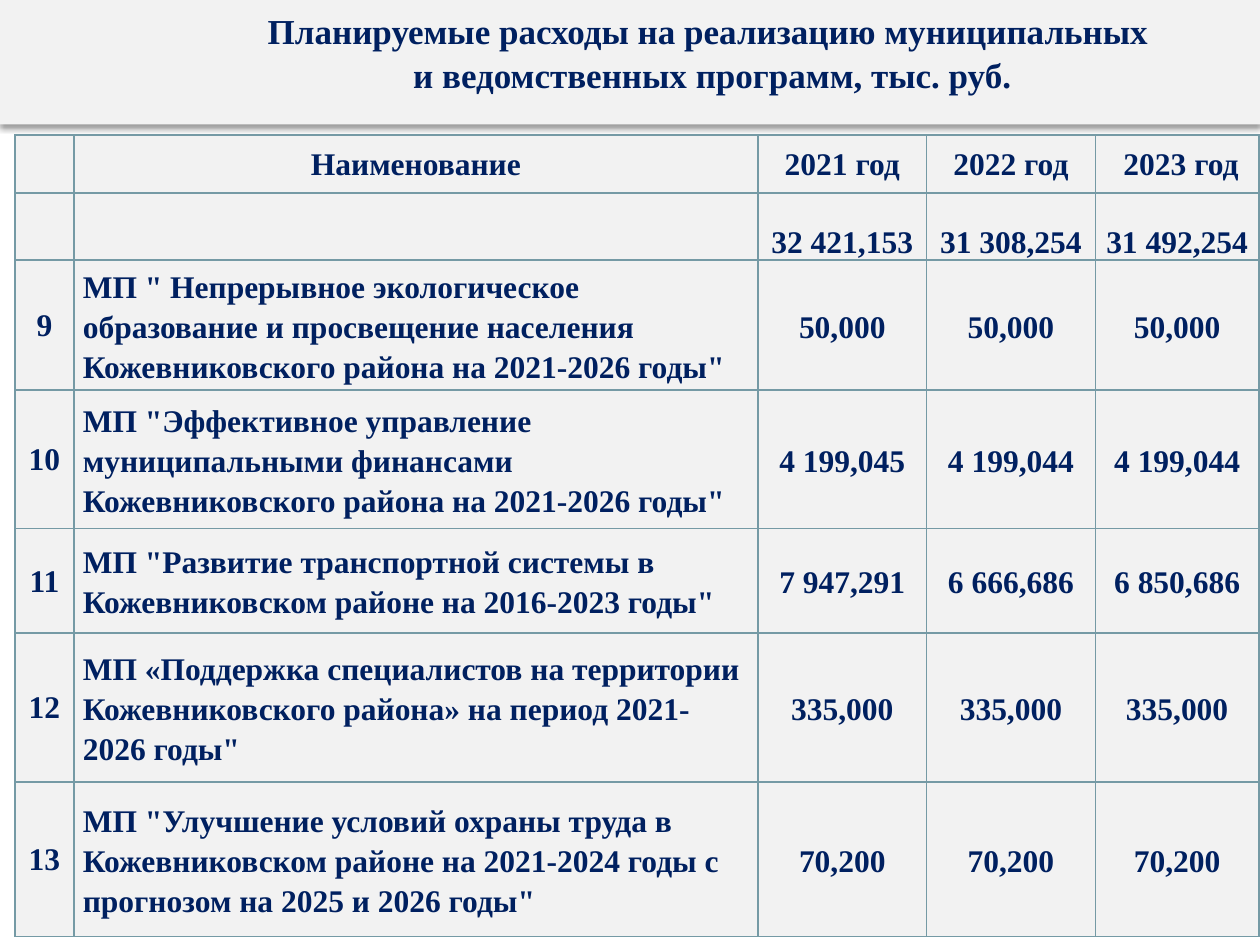
from dataclasses import dataclass

import lxml.etree
import pptx
import pptx.dml.color
import pptx.enum.text
import pptx.oxml
import pptx.oxml.ns
import pptx.util

Cm = pptx.util.Cm
Pt = pptx.util.Pt
Align = pptx.enum.text.PP_ALIGN
Anchor = pptx.enum.text.MSO_ANCHOR
DRAWING = pptx.oxml.ns.nsdecls("a")


@dataclass(frozen=True)
class Theme:
    font: str = "Times New Roman"
    text: str = "002060"
    panel: str = "F2F2F2"
    border: str = "759AA5"
    title_size: int = 20
    table_size: int = 18
    border_width: int = 1


THEME = Theme()

TITLE = [
    "Планируемые расходы на реализацию муниципальных",
    " и ведомственных программ, тыс. руб.",
]
TITLE_INDENT = 3.15

HEADER_ROWS = [
    ("", "Наименование", "2021 год", "2022 год", " 2023 год"),
    ("", "", "32 421,153", "31 308,254", "31 492,254"),
]
PROGRAM_ROWS = [
    ("9", 'МП " Непрерывное экологическое образование и просвещение населения '
          'Кожевниковского района на 2021-2026 годы"',
     "50,000", "50,000", "50,000"),
    ("10", 'МП "Эффективное управление муниципальными финансами '
           'Кожевниковского района на 2021-2026 годы"',
     "4 199,045", "4 199,044", "4 199,044"),
    ("11", 'МП "Развитие транспортной системы в Кожевниковском районе '
           'на 2016-2023 годы"',
     "7 947,291", "6 666,686", "6 850,686"),
    ("12", "МП «Поддержка специалистов на территории Кожевниковского района» "
           'на период 2021-2026 годы"',
     "335,000", "335,000", "335,000"),
    ("13", 'МП "Улучшение условий охраны труда в Кожевниковском районе '
           'на 2021-2024 годы с прогнозом на 2025 и 2026 годы"',
     "70,200", "70,200", "70,200"),
]
COLUMN_WIDTHS = [1.19, 13.79, 3.4, 3.4, 3.3]
ROW_HEIGHTS = [1.17, 1.35, 2.62, 2.79, 2.11, 3, 3.12]


def fill_solid(target, color):
    target.fill.solid()
    target.fill.fore_color.rgb = pptx.dml.color.RGBColor.from_string(color)


def format_paragraph(paragraph, size, alignment, line_spacing=1.0):
    paragraph.alignment = alignment
    paragraph.line_spacing = line_spacing
    for run in paragraph.runs:
        run.font.name = THEME.font
        run.font.size = Pt(size)
        run.font.bold = True
        run.font.color.rgb = pptx.dml.color.RGBColor.from_string(THEME.text)


def set_margins(target, left, top, right, bottom):
    target.margin_left, target.margin_top = Cm(left), Cm(top)
    target.margin_right, target.margin_bottom = Cm(right), Cm(bottom)


def add_shadow(shape):
    shape._element.spPr.append(pptx.oxml.parse_xml(
        f'<a:effectLst {DRAWING}><a:outerShdw blurRad="{Pt(3.1)}" dist="{Pt(2)}" '
        'dir="5400000" rotWithShape="0"><a:srgbClr val="000000">'
        '<a:alpha val="38000"/></a:srgbClr></a:outerShdw></a:effectLst>'))


def add_title(slide):
    title = slide.shapes.title
    title.left, title.top, title.width, title.height = 0, 0, Cm(25.4), Cm(2.51)
    fill_solid(title, THEME.panel)
    add_shadow(title)
    frame = title.text_frame
    frame.text = "\n".join(TITLE)
    frame.word_wrap = True
    frame.auto_size = pptx.enum.text.MSO_AUTO_SIZE.NONE
    frame.vertical_anchor = Anchor.TOP
    set_margins(frame, 0.25, 0.2, 0.25, 0.13)
    for paragraph in frame.paragraphs:
        format_paragraph(paragraph, THEME.title_size, Align.CENTER)
    first, second = frame.paragraphs
    first._p.get_or_add_pPr().set("marL", str(Cm(TITLE_INDENT)))
    second.space_before = Pt(1)


def add_borders(cell):
    properties = cell._tc.get_or_add_tcPr()
    for position, side in enumerate("LRTB"):
        properties.insert(position, pptx.oxml.parse_xml(
            f'<a:ln{side} {DRAWING} w="{Pt(THEME.border_width)}"><a:solidFill>'
            f'<a:srgbClr val="{THEME.border}"/></a:solidFill></a:ln{side}>'))


def format_cell(cell, text, row, column):
    is_program = row >= len(HEADER_ROWS)
    is_detail = is_program and column > 0
    cell.text_frame.text = text
    cell.vertical_anchor = Anchor.BOTTOM if row == 1 else Anchor.MIDDLE
    if is_detail:
        set_margins(cell, 0.18, 0, 0.18, 0)
    else:
        set_margins(cell, 0.03, 0.03, 0.03, 0)
    alignment = Align.LEFT if is_program and column == 1 else Align.CENTER
    format_paragraph(cell.text_frame.paragraphs[0], THEME.table_size,
                     alignment, 1.15 if is_detail else 1.0)
    fill_solid(cell, THEME.panel)
    add_borders(cell)


def add_program_table(slide):
    rows = HEADER_ROWS + PROGRAM_ROWS
    table = slide.shapes.add_table(
        len(rows), len(COLUMN_WIDTHS), Cm(0.3), Cm(2.72),
        Cm(sum(COLUMN_WIDTHS)), Cm(sum(ROW_HEIGHTS))).table
    table.first_row = False
    table.horz_banding = False
    for column, width in zip(table.columns, COLUMN_WIDTHS):
        column.width = Cm(width)
    for row, height in zip(table.rows, ROW_HEIGHTS):
        row.height = Cm(height)
    for row, texts in enumerate(rows):
        for column, text in enumerate(texts):
            format_cell(table.cell(row, column), text, row, column)


def main():
    presentation = pptx.Presentation()
    presentation.slide_width = Cm(25.4)
    presentation.slide_height = Cm(19.05)
    slide = presentation.slides.add_slide(presentation.slide_layouts[5])
    add_title(slide)
    add_program_table(slide)
    presentation.save("out.pptx")


if __name__ == "__main__":
    main()
